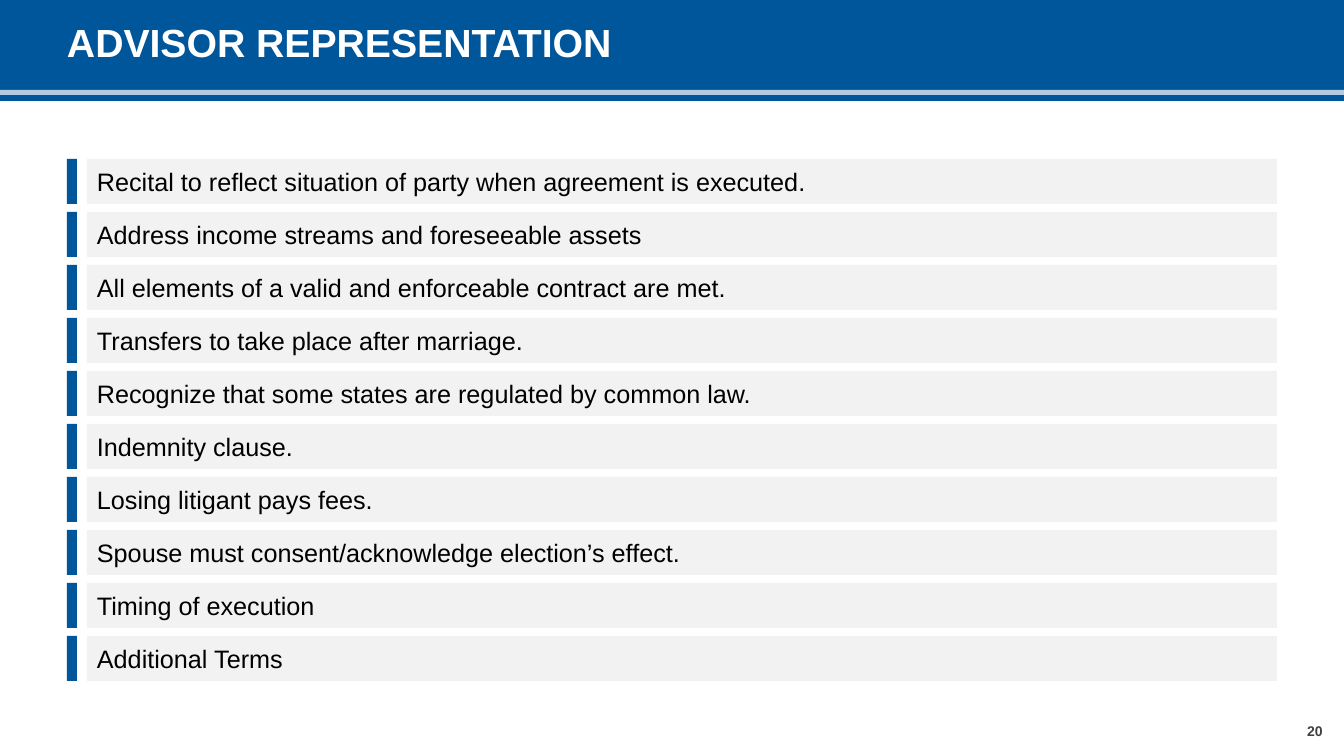
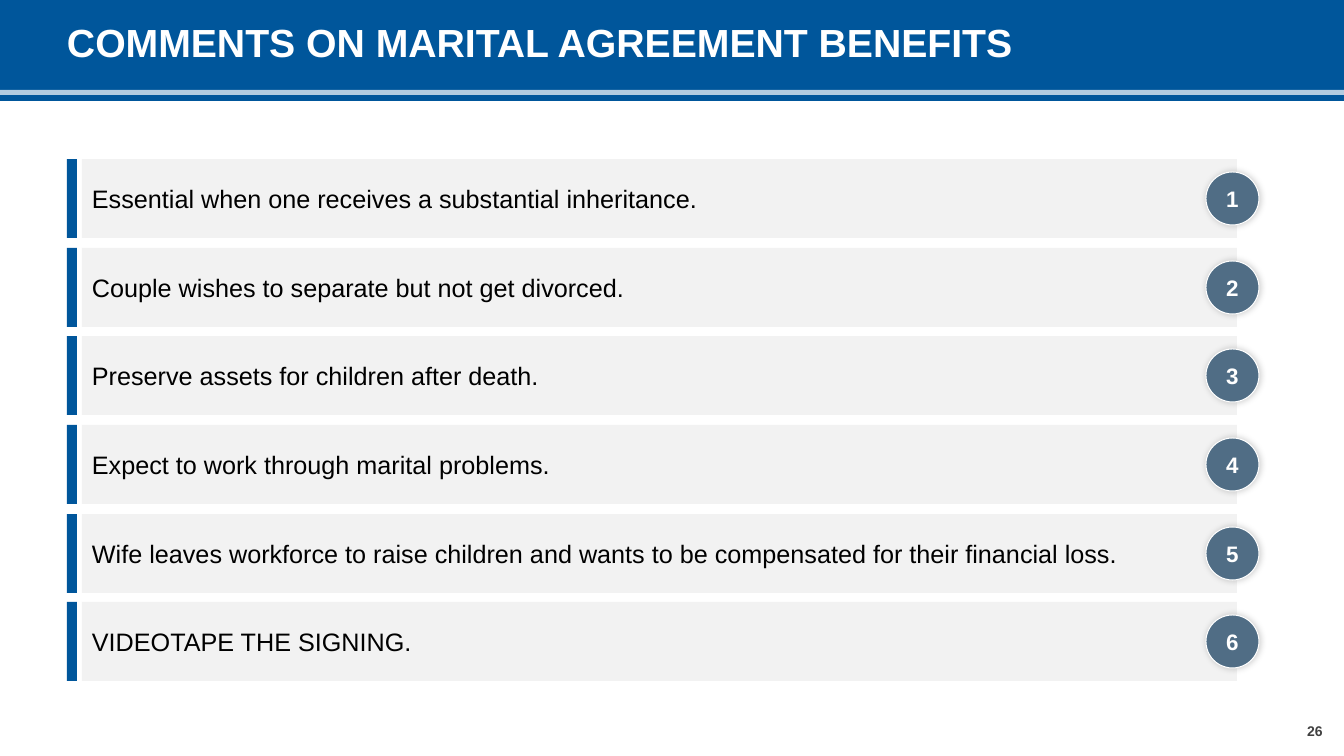
from dataclasses import dataclass

import lxml.etree
import pptx
import pptx.dml.color
import pptx.enum.shapes
import pptx.enum.text
import pptx.oxml
import pptx.oxml.ns
import pptx.presentation
import pptx.shapes.autoshape
import pptx.slide
import pptx.util

Shape = pptx.shapes.autoshape.Shape
Slide = pptx.slide.Slide
PresetShape = pptx.enum.shapes.MSO_SHAPE
Align = pptx.enum.text.PP_ALIGN

EMU_PER_PX = 914400 / 100.8


@dataclass(frozen=True)
class Theme:
    font: str = "Arial"
    blue: str = "00569B"
    slate: str = "506D85"
    panel: str = "F2F2F2"
    white: str = "FFFFFF"
    black: str = "000000"
    grey: str = "404040"
    title_size: int = 28
    body_size: int = 18
    badge_size: int = 16
    page_size: int = 10


@dataclass(frozen=True)
class TextStyle:
    size: int
    color: str
    bold: bool = False
    align: Align = Align.LEFT


@dataclass(frozen=True)
class Box:
    left: int
    top: int
    width: int
    height: int


@dataclass(frozen=True)
class RowList:
    """Layout of a list of rows; gap is the space between rows."""
    gap: int
    panel_left: int
    panel_right: int
    right_inset: int = 10
    numbered: bool = False


@dataclass(frozen=True)
class SlideContent:
    title: str
    page: int
    layout: RowList
    rows: tuple[str, ...]


THEME = Theme()
TITLE = TextStyle(THEME.title_size, THEME.white, bold=True)
BODY = TextStyle(THEME.body_size, THEME.black)
BADGE = TextStyle(THEME.badge_size, THEME.white, True, Align.CENTER)
PAGE = TextStyle(THEME.page_size, THEME.grey, True, Align.CENTER)

SLIDE_WIDTH, SLIDE_HEIGHT = 1344, 756
MARGIN = 67
ROWS_TOP, ROWS_HEIGHT = 159, 522
ACCENT_WIDTH = 10
BADGE_LEFT, BADGE_SIZE = 1206, 53

SLIDES = (
    SlideContent(
        "ADVISOR REPRESENTATION", 20,
        RowList(gap=8, panel_left=87, panel_right=1277),
        (
            "Recital to reflect situation of party when agreement is executed.",
            "Address income streams and foreseeable assets",
            "All elements of a valid and enforceable contract are met.",
            "Transfers to take place after marriage.",
            "Recognize that some states are regulated by common law.",
            "Indemnity clause.",
            "Losing litigant pays fees.",
            "Spouse must consent/acknowledge election’s effect.",
            "Timing of execution",
            "Additional Terms",
        ),
    ),
    SlideContent(
        "COMMENTS ON MARITAL AGREEMENT BENEFITS", 26,
        RowList(gap=10, panel_left=82, panel_right=1237, right_inset=40, numbered=True),
        (
            "Essential when one receives a substantial inheritance.",
            "Couple wishes to separate but not get divorced.",
            "Preserve assets for children after death.",
            "Expect to work through marital problems.",
            "Wife leaves workforce to raise children and wants to be compensated"
            " for their financial loss.",
            "VIDEOTAPE THE SIGNING.",
        ),
    ),
)


def px(length: int) -> pptx.util.Emu:
    return pptx.util.Emu(round(length * EMU_PER_PX))


def rgb(color: str) -> pptx.dml.color.RGBColor:
    return pptx.dml.color.RGBColor.from_string(color)


def add_filled(slide: Slide, box: Box, color: str,
               preset: PresetShape = PresetShape.RECTANGLE) -> Shape:
    shape = slide.shapes.add_shape(
        preset, px(box.left), px(box.top), px(box.width), px(box.height))
    shape.shadow.inherit = False
    shape.fill.solid()
    shape.fill.fore_color.rgb = rgb(color)
    shape.line.fill.background()
    return shape


def set_text(shape: Shape, text: str, style: TextStyle,
             left_inset: int = 0, right_inset: int = 0) -> None:
    frame = shape.text_frame
    frame.word_wrap = True
    frame.vertical_anchor = pptx.enum.text.MSO_ANCHOR.MIDDLE
    frame.margin_left, frame.margin_right = px(left_inset), px(right_inset)
    frame.margin_top = frame.margin_bottom = 0
    paragraph = frame.paragraphs[0]
    paragraph.text = text
    paragraph.alignment = style.align
    paragraph.font.name = THEME.font
    paragraph.font.size = pptx.util.Pt(style.size)
    paragraph.font.bold = style.bold
    paragraph.font.color.rgb = rgb(style.color)


def add_text(slide: Slide, box: Box, text: str, style: TextStyle) -> Shape:
    shape = slide.shapes.add_textbox(
        px(box.left), px(box.top), px(box.width), px(box.height))
    set_text(shape, text, style)
    return shape


def set_opacity(shape: Shape, percent: int) -> None:
    color = shape.fill._xPr.find(".//" + pptx.oxml.ns.qn("a:srgbClr"))
    lxml.etree.SubElement(color, pptx.oxml.ns.qn("a:alpha"), val=str(percent * 1000))


def add_soft_shadow(shape: Shape) -> None:
    effects = shape.element.spPr.find(pptx.oxml.ns.qn("a:effectLst"))
    effects.append(pptx.oxml.parse_xml(
        f'<a:outerShdw {pptx.oxml.ns.nsdecls("a")} blurRad="63500" dist="12700" dir="0">'
        f'<a:srgbClr val="{THEME.black}"><a:alpha val="20000"/></a:srgbClr>'
        '</a:outerShdw>'))


def add_frame(slide: Slide, title: str, page: int) -> None:
    """Draw the header band, its rule, the title and the page number."""
    add_filled(slide, Box(0, 0, SLIDE_WIDTH, 101), THEME.blue)
    rule = add_filled(slide, Box(0, 90, SLIDE_WIDTH, 5), THEME.white)
    set_opacity(rule, 70)
    heading = add_text(slide, Box(MARGIN, 0, 1184, 90), title, TITLE)
    heading.text_frame.paragraphs[0].line_spacing = 0.9
    add_text(slide, Box(1291, 705, 48, 51), str(page), PAGE)


def add_badge(slide: Slide, number: int, center: int) -> None:
    box = Box(BADGE_LEFT, center - BADGE_SIZE // 2, BADGE_SIZE, BADGE_SIZE)
    badge = add_filled(slide, box, THEME.slate, PresetShape.OVAL)
    badge.line.color.rgb = rgb(THEME.white)
    badge.line.width = pptx.util.Pt(0.75)
    add_soft_shadow(badge)
    set_text(badge, str(number), BADGE)


def add_rows(slide: Slide, rows: tuple[str, ...], layout: RowList) -> None:
    pitch = (ROWS_HEIGHT + layout.gap) / len(rows)
    height = round(pitch - layout.gap)
    panel_width = layout.panel_right - layout.panel_left
    for index, text in enumerate(rows):
        top = round(ROWS_TOP + index * pitch)
        panel = add_filled(
            slide, Box(layout.panel_left, top, panel_width, height), THEME.panel)
        set_text(panel, text, BODY, 10, layout.right_inset)
        add_filled(slide, Box(MARGIN, top, ACCENT_WIDTH, height), THEME.blue)
        if layout.numbered:
            add_badge(slide, index + 1, top + height // 2)


def add_content_slide(presentation: pptx.presentation.Presentation,
                      content: SlideContent) -> None:
    slide = presentation.slides.add_slide(presentation.slide_layouts[6])
    add_frame(slide, content.title, content.page)
    add_rows(slide, content.rows, content.layout)


def main() -> None:
    presentation = pptx.Presentation()
    presentation.slide_width = px(SLIDE_WIDTH)
    presentation.slide_height = px(SLIDE_HEIGHT)
    for content in SLIDES:
        add_content_slide(presentation, content)
    presentation.save("out.pptx")


if __name__ == "__main__":
    main()
